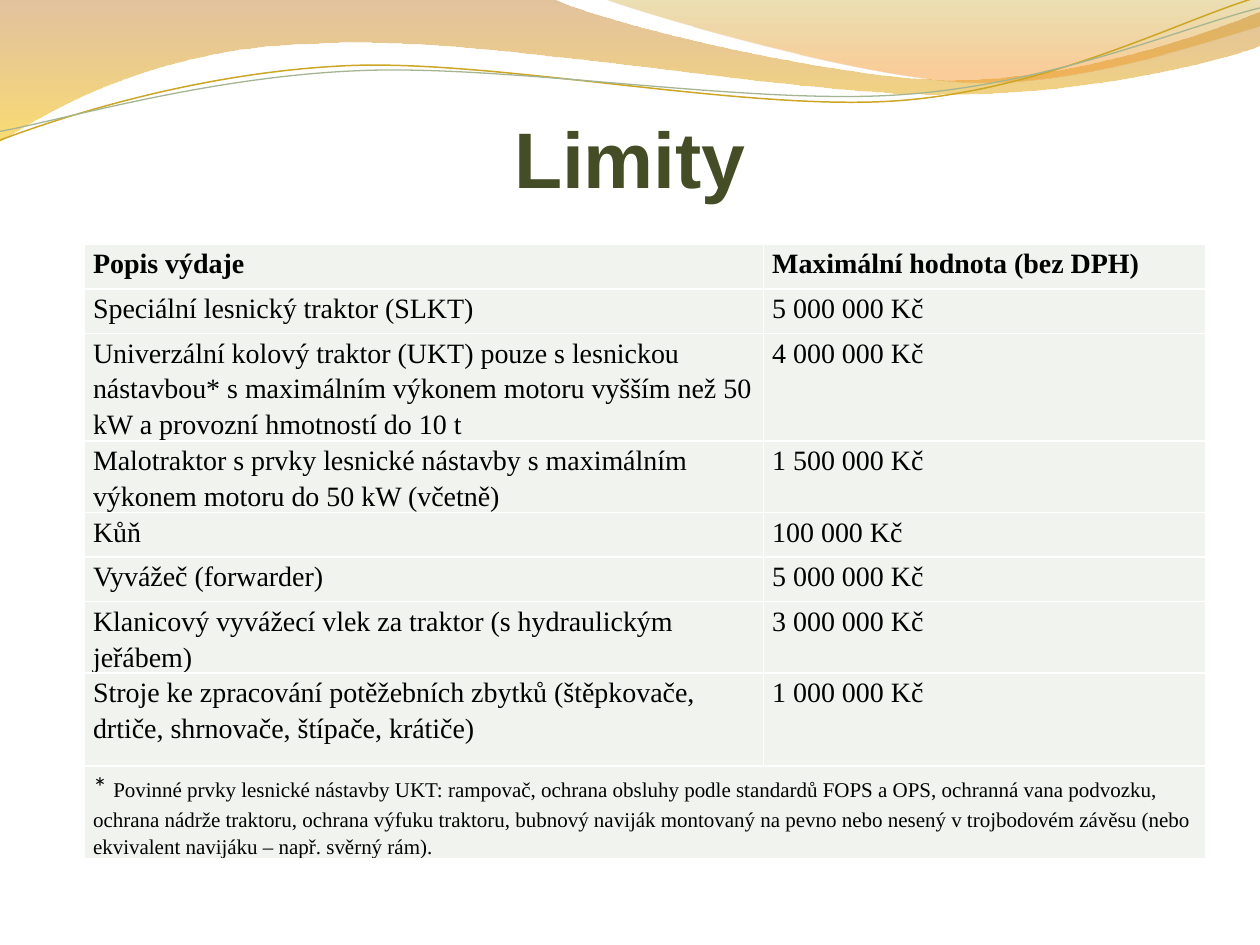
from dataclasses import dataclass
from typing import Optional

from lxml.etree import SubElement
from pptx import Presentation
from pptx.dml.color import RGBColor
from pptx.enum.text import MSO_ANCHOR, MSO_AUTO_SIZE, PP_ALIGN
from pptx.oxml import parse_xml
from pptx.oxml.ns import nsdecls, qn
from pptx.util import Pt

SERIF = "Times New Roman"
CELL_FILL = "F0F3EE"
COLUMN_WIDTHS = (388.1, 252.7)
FOOTNOTE_HEIGHT = 52.5
TABLE_HEIGHT = 363.6


@dataclass(frozen=True)
class Stop:
    position: float
    color: str
    opacity: int


@dataclass(frozen=True)
class Wave:
    """Segments hold one point for a line, three for a Bezier curve."""
    start: tuple
    segments: tuple
    stops: tuple = ()
    line_color: Optional[str] = None
    line_width: float = 0
    rotation: float = 0


@dataclass(frozen=True)
class Limit:
    item: str
    maximum: str
    height: float


WAVES = (
    Wave((0, 0), (
        ((317, -0.5),),
        ((343, 12), (478, 45.5), (546, 45.5)),
        ((614, 45.5), (690, 19), (720, 6.5)),
        ((720.5, 26),),
        ((708, 31.5), (626, 54.5), (537, 54)),
        ((448, 54), (275, 20), (185, 24.5)),
        ((93, 26), (33, 60), (-0.5, 81)),
        ((0, 0),),
    ), (Stop(0, "C07A28", 45), Stop(1, "F7BF00", 55))),
    Wave((345, -0.5), (
        ((366.5, 8), (491, 44.5), (553.5, 47)),
        ((616, 49.5), (692, 23), (720, 15)),
        ((720, 0),),
        ((345, -0.5),),
    ), (Stop(0, "C09709", 30), Stop(0.8, "F59320", 45))),
    Wave((-1.4, 63.1), (
        ((33.7, 51.7), (114.3, 29.5), (199.9, 30)),
        ((285, 30.5), (425.9, 67.2), (512.6, 64.8)),
        ((599.3, 62.4), (676.6, 25.9), (720.1, 15.4)),
    ), line_color="CCA624", line_width=0.85, rotation=357.3),
    Wave((-1.1, 58.1), (
        ((33.1, 53.7), (118.2, 32.6), (204.3, 33.1)),
        ((290.4, 33.2), (429.1, 63.8), (515.3, 61.4)),
        ((601.5, 59.4), (678.5, 30), (721.4, 21.5)),
    ), line_color="A5B592", line_width=0.75, rotation=357.3),
)

LIMITS = (
    Limit("Popis výdaje", "Maximální hodnota (bez DPH)", 25.5),
    Limit("Speciální lesnický traktor (SLKT)", "5 000 000 Kč", 25.5),
    Limit("Univerzální kolový traktor (UKT) pouze s lesnickou nástavbou* s maximálním "
          "výkonem motoru vyšším než 50 kW a provozní hmotností do 10 t",
          "4 000 000 Kč", 39.5),
    Limit("Malotraktor s prvky lesnické nástavby s maximálním výkonem motoru "
          "do 50 kW (včetně)", "1 500 000 Kč", 37.5),
    Limit("Kůň", "100 000 Kč", 25.5),
    Limit("Vyvážeč (forwarder)", "5 000 000 Kč", 25.5),
    Limit("Klanicový vyvážecí vlek za traktor (s hydraulickým jeřábem)",
          "3 000 000 Kč", 29),
    Limit("Stroje ke zpracování potěžebních zbytků (štěpkovače, drtiče, shrnovače, "
          "štípače, krátiče)", "1 000 000 Kč", 53),
)
FOOTNOTE = (
    "Povinné prvky lesnické nástavby UKT: rampovač, ochrana obsluhy podle standardů "
    "FOPS a OPS, ochranná vana podvozku, ochrana nádrže traktoru, ochrana výfuku "
    "traktoru, bubnový naviják montovaný na pevno nebo nesený v trojbodovém závěsu "
    "(nebo ekvivalent navijáku – např. svěrný rám)."
)


def rgb(color: str) -> RGBColor:
    return RGBColor.from_string(color)


def format_span(span, size: float, font: str, color: str = "000000",
                bold: bool = False) -> None:
    span.font.size = Pt(size)
    span.font.name = font
    span.font.bold = bold
    span.font.color.rgb = rgb(color)


def bend(shape, segments: tuple) -> None:
    """Join each three line steps of a curved segment into one Bezier step."""
    steps = iter(list(shape.element.iter(qn("a:lnTo"))))
    for segment in segments:
        parts = [next(steps) for _ in segment]
        if len(parts) == 3:
            curve = parse_xml(f'<a:cubicBezTo {nsdecls("a")}/>')
            parts[0].addprevious(curve)
            for part in parts:
                curve.append(part[0])
                part.getparent().remove(part)


def draw_wave(page, wave: Wave) -> None:
    builder = page.shapes.build_freeform(*map(Pt, wave.start))
    builder.add_line_segments([(Pt(x), Pt(y)) for segment in wave.segments
                               for x, y in segment], close=bool(wave.stops))
    shape = builder.convert_to_shape()
    bend(shape, wave.segments)
    shape.rotation = wave.rotation
    shape.shadow.inherit = False
    if wave.line_color:
        shape.fill.background()
        shape.line.color.rgb = rgb(wave.line_color)
        shape.line.width = Pt(wave.line_width)
        return
    shape.line.fill.background()
    shape.fill.gradient()
    shape.fill.gradient_angle = 270
    for target, stop in zip(shape.fill.gradient_stops, wave.stops):
        target.position = stop.position
        target.color.rgb = rgb(stop.color)
    for color, stop in zip(shape.element.iter(qn("a:srgbClr")), wave.stops):
        SubElement(color, qn("a:alpha"), val=str(stop.opacity * 1000))


def format_cell(cell) -> None:
    cell.margin_left = cell.margin_right = Pt(5)
    cell.margin_top = cell.margin_bottom = 0
    cell.fill.solid()
    cell.fill.fore_color.rgb = rgb(CELL_FILL)
    properties = cell._tc.get_or_add_tcPr()
    for index, side in enumerate(("lnL", "lnR", "lnT", "lnB")):
        properties.insert(index, parse_xml(
            f'<a:{side} {nsdecls("a")} w="{Pt(1)}"><a:solidFill>'
            f'<a:srgbClr val="FFFFFF"/></a:solidFill></a:{side}>'))


def draw_table(page) -> None:
    heights = [limit.height for limit in LIMITS] + [FOOTNOTE_HEIGHT]
    frame = page.shapes.add_table(len(heights), 2, Pt(48.2), Pt(139.6),
                                  Pt(sum(COLUMN_WIDTHS)), Pt(TABLE_HEIGHT))
    table = frame.table
    table.first_row = table.horz_banding = False
    for column, width in zip(table.columns, COLUMN_WIDTHS):
        column.width = Pt(width)
    for row, height in zip(table.rows, heights):
        row.height = Pt(height)
        for cell in row.cells:
            format_cell(cell)
    frame.height = Pt(TABLE_HEIGHT)
    for index, limit in enumerate(LIMITS):
        for cell, text in zip(table.rows[index].cells, (limit.item, limit.maximum)):
            cell.text_frame.text = text
            para = cell.text_frame.paragraphs[0]
            para.line_spacing = 1.15
            format_span(para.runs[0], 16, SERIF, bold=index == 0)

    # Footnote across both columns
    last = len(LIMITS)
    table.cell(last, 0).merge(table.cell(last, 1))
    para = table.cell(last, 0).text_frame.paragraphs[0]
    para.line_spacing = 1.15
    for text, size, font in (("* ", 16, "Calibri"), (FOOTNOTE, 12, SERIF)):
        span = para.add_run()
        span.text = text
        format_span(span, size, font)


def draw_title(page) -> None:
    title = page.shapes.title
    title.left, title.top, title.width, title.height = Pt(36), Pt(55.5), Pt(648), Pt(61)
    frame = title.text_frame
    frame.text = "Limity"
    frame.auto_size = MSO_AUTO_SIZE.NONE
    frame.vertical_anchor = MSO_ANCHOR.BOTTOM
    frame.margin_left = frame.margin_right = frame.margin_bottom = 0
    frame.margin_top = Pt(3.6)
    para = frame.paragraphs[0]
    para.alignment = PP_ALIGN.CENTER
    format_span(para.runs[0], 45, "Arial", "444D26", bold=True)


def main() -> None:
    deck = Presentation()
    deck.slide_width, deck.slide_height = Pt(720), Pt(540)
    page = deck.slides.add_slide(deck.slide_layouts[5])
    for wave in WAVES:
        draw_wave(page, wave)
    draw_title(page)
    draw_table(page)
    deck.save("out.pptx")


if __name__ == "__main__":
    main()
